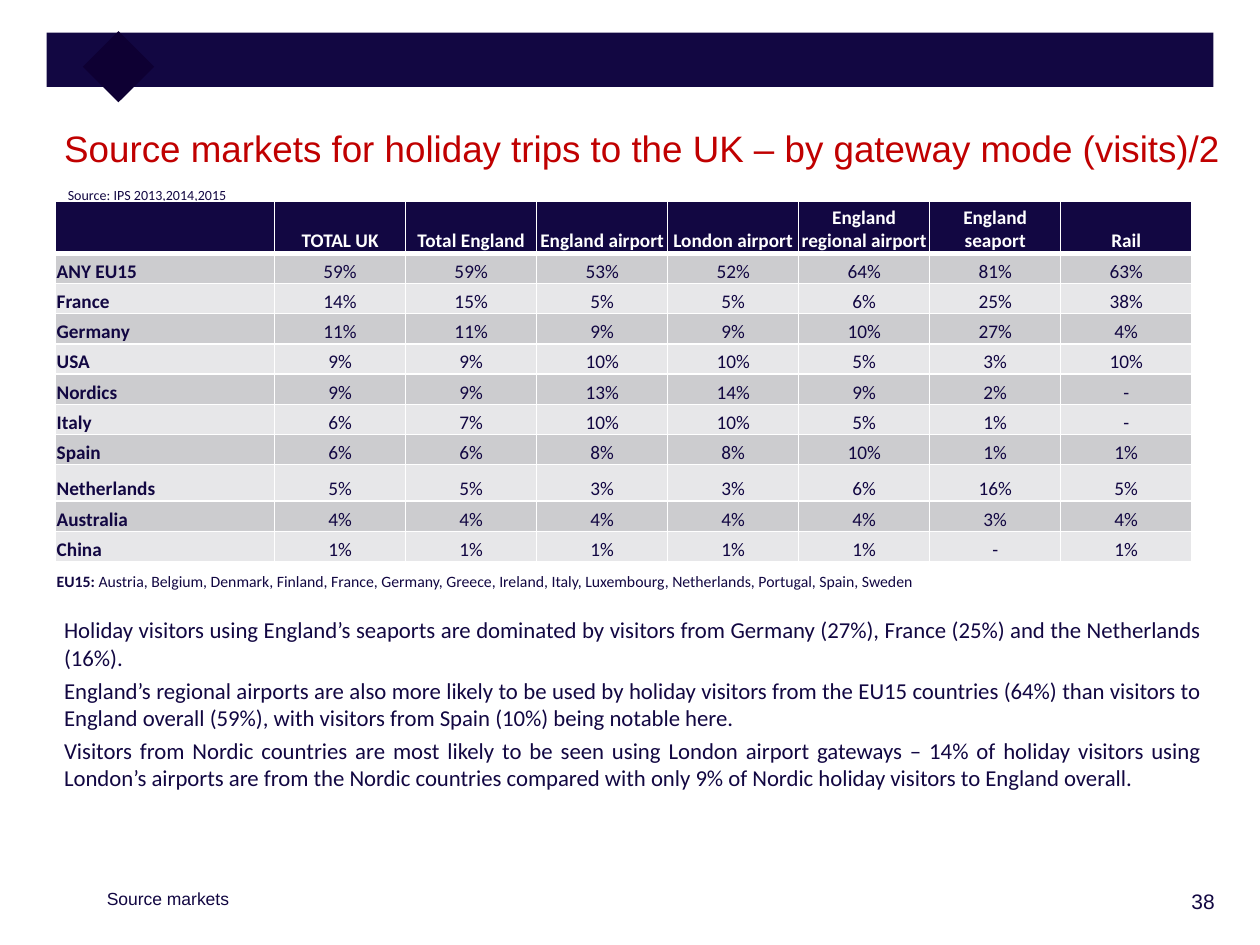
from lxml import etree
from pptx import Presentation
from pptx.dml.color import RGBColor
from pptx.enum.shapes import MSO_SHAPE
from pptx.enum.text import MSO_ANCHOR, MSO_AUTO_SIZE, PP_ALIGN
from pptx.oxml.ns import qn
from pptx.util import Inches, Pt

RECT = MSO_SHAPE.RECTANGLE
TOP, MIDDLE, BOTTOM = MSO_ANCHOR.TOP, MSO_ANCHOR.MIDDLE, MSO_ANCHOR.BOTTOM
FIXED = MSO_AUTO_SIZE.NONE
LEFT, RIGHT, CENTER, FULL = PP_ALIGN.LEFT, PP_ALIGN.RIGHT, PP_ALIGN.CENTER, PP_ALIGN.JUSTIFY
WIDE, HIGH = Inches(10), Inches(7.5)
COLS, ROWS = 100, 75
NAVY, DARK, RED, WHITE = "120742", "0E0033", "C00000", "FFFFFF"
BANDS = "CCCCCF", "E7E7E9"

TITLE = "Source markets for holiday trips to the UK – by gateway mode (visits)/2"
HEADS = ["", "TOTAL UK", "Total England", "England airport", "London airport",
         "England regional airport", "England seaport", "Rail"]
MARKETS = [
    ("ANY EU15", "59% 59% 53% 52% 64% 81% 63%"),
    ("France", "14% 15% 5% 5% 6% 25% 38%"),
    ("Germany", "11% 11% 9% 9% 10% 27% 4%"),
    ("USA", "9% 9% 10% 10% 5% 3% 10%"),
    ("Nordics", "9% 9% 13% 14% 9% 2% -"),
    ("Italy", "6% 7% 10% 10% 5% 1% -"),
    ("Spain", "6% 6% 8% 8% 10% 1% 1%"),
    ("Netherlands", "5% 5% 3% 3% 6% 16% 5%"),
    ("Australia", "4% 4% 4% 4% 4% 3% 4%"),
    ("China", "1% 1% 1% 1% 1% - 1%"),
]
NOTE = ("EU15: ", "Austria, Belgium, Denmark, Finland, France, Germany, Greece, Ireland, "
        "Italy, Luxembourg, Netherlands, Portugal, Spain, Sweden")
POINTS = [
    "Holiday visitors using England’s seaports are dominated by visitors from Germany (27%), "
    "France (25%) and the Netherlands (16%).",
    "England’s regional airports are also more likely to be used by holiday visitors from the "
    "EU15 countries (64%) than visitors to England overall (59%), with visitors from Spain "
    "(10%) being notable here.",
    "Visitors from Nordic countries are most likely to be seen using London airport gateways – "
    "14% of holiday visitors using London’s airports are from the Nordic countries compared "
    "with only 9% of Nordic holiday visitors to England overall.",
]


def across(n):
    return int(WIDE * n / COLS)


def down(n):
    return int(HIGH * n / ROWS)


def place(box):
    x, y, w, h = box
    return across(x), down(y), across(w), down(h)


def color(code):
    return RGBColor.from_string(code)


def style(font, size, tint=NAVY, face="Calibri", bold=False):
    font.size, font.name, font.bold = Pt(size), face, bold
    font.color.rgb = color(tint)


def write(frame, lines, size, tint=NAVY, face="Calibri", align=LEFT, gap=0):
    frame.word_wrap, frame.auto_size = True, FIXED
    frame.vertical_anchor = TOP
    frame.text = "\n".join(lines)
    for i, para in enumerate(frame.paragraphs):
        para.alignment = align
        para.space_before = Pt(gap if i else 0)
        for run in para.runs:
            style(run.font, size, tint, face)


def add_text(slide, box, lines, size, **looks):
    write(slide.shapes.add_textbox(*place(box)).text_frame, lines, size, **looks)


def add_title(slide, box):
    title = slide.shapes.title
    title.left, title.top, title.width, title.height = place(box)
    write(title.text_frame, [TITLE], 21, tint=RED, face="Arial")


def add_block(slide, box, tint, turn=0):
    shape = slide.shapes.add_shape(RECT, *place(box))
    shape.shadow.inherit = False
    shape.fill.solid()
    shape.fill.fore_color.rgb = color(tint)
    shape.line.fill.background()
    shape.rotation = turn


def add_banner(slide, box):
    x, y, w, h = box
    add_block(slide, box, NAVY)
    add_block(slide, (x + 3.7, y + 0.7, 4, 4), DARK, 45)


def edge(cell, base):
    props = cell._tc.get_or_add_tcPr()
    for i, (side, width) in enumerate(zip("LRTB", (1, 1, 1, base))):
        line = etree.Element(qn(f"a:ln{side}"), w=str(Pt(width)))
        fill = etree.SubElement(line, qn("a:solidFill"))
        etree.SubElement(fill, qn("a:srgbClr"), val=WHITE)
        props.insert(i, line)


def set_cell(cell, parts, size, tint, align, back, base=1):
    cell.vertical_anchor = BOTTOM
    cell.margin_left = cell.margin_right = cell.margin_top = Inches(0.01)
    cell.margin_bottom = 0
    para = cell.text_frame.paragraphs[0]
    para.alignment = align
    style(para.font, size, tint)
    for text, bold in parts:
        run = para.add_run()
        run.text = text
        style(run.font, size, tint, bold=bold)
    if back:
        cell.fill.solid()
        cell.fill.fore_color.rgb = color(back)
    else:
        cell.fill.background()
    edge(cell, base)


def add_grid(slide, box):
    count = len(MARKETS) + 2
    table = slide.shapes.add_table(count, len(HEADS), *place(box)).table
    table.horz_banding = table.first_row = False
    first = 17.4
    rest = (box[2] - first) / (len(HEADS) - 1)
    for i, col in enumerate(table.columns):
        col.width = across(rest if i else first)
    tall = {0: 4.1, 8: 2.9}
    for i, row in enumerate(table.rows):
        row.height = down(tall.get(i, 2.4))
    for i, head in enumerate(HEADS):
        parts = [(head, True)] if head else []
        set_cell(table.cell(0, i), parts, 11, WHITE, CENTER, NAVY, 3)
    for i, (name, shares) in enumerate(MARKETS):
        for j, text in enumerate([name, *shares.split()]):
            set_cell(table.cell(i + 1, j), [(text, j == 0)], 11, NAVY,
                     CENTER if j else LEFT, BANDS[i % 2])
    last = table.cell(count - 1, 0)
    last.merge(table.cell(count - 1, len(HEADS) - 1))
    set_cell(last, [(NOTE[0], True), (NOTE[1], False)], 9, NAVY, LEFT, None)


def add_foot(slide, box):
    x, y, w, h = box
    add_text(slide, (x, y, 26.7, h), ["Source markets"], 10, face="Arial")
    add_text(slide, (x + w - 12.1, y, 12.1, h), ["38"], 12, face="Arial", align=RIGHT)


def main():
    deck = Presentation()
    deck.slide_width, deck.slide_height = WIDE, HIGH
    slide = deck.slides.add_slide(deck.slide_layouts[5])
    add_banner(slide, (3.7, 2.6, 92.6, 4.3))
    add_title(slide, (4.1, 9.5, 95.9, 6.1))
    add_text(slide, (4.4, 14.3, 22.6, 1.8), ["Source: IPS 2013,2014,2015"], 8)
    add_grid(slide, (4.4, 16, 90.2, 31))
    add_text(slide, (4.1, 48.4, 92.1, 22.8), POINTS, 13, align=FULL, gap=3.2)
    add_foot(slide, (7.5, 70, 89.9, 3.6))
    deck.save("out.pptx")


if __name__ == "__main__":
    main()
